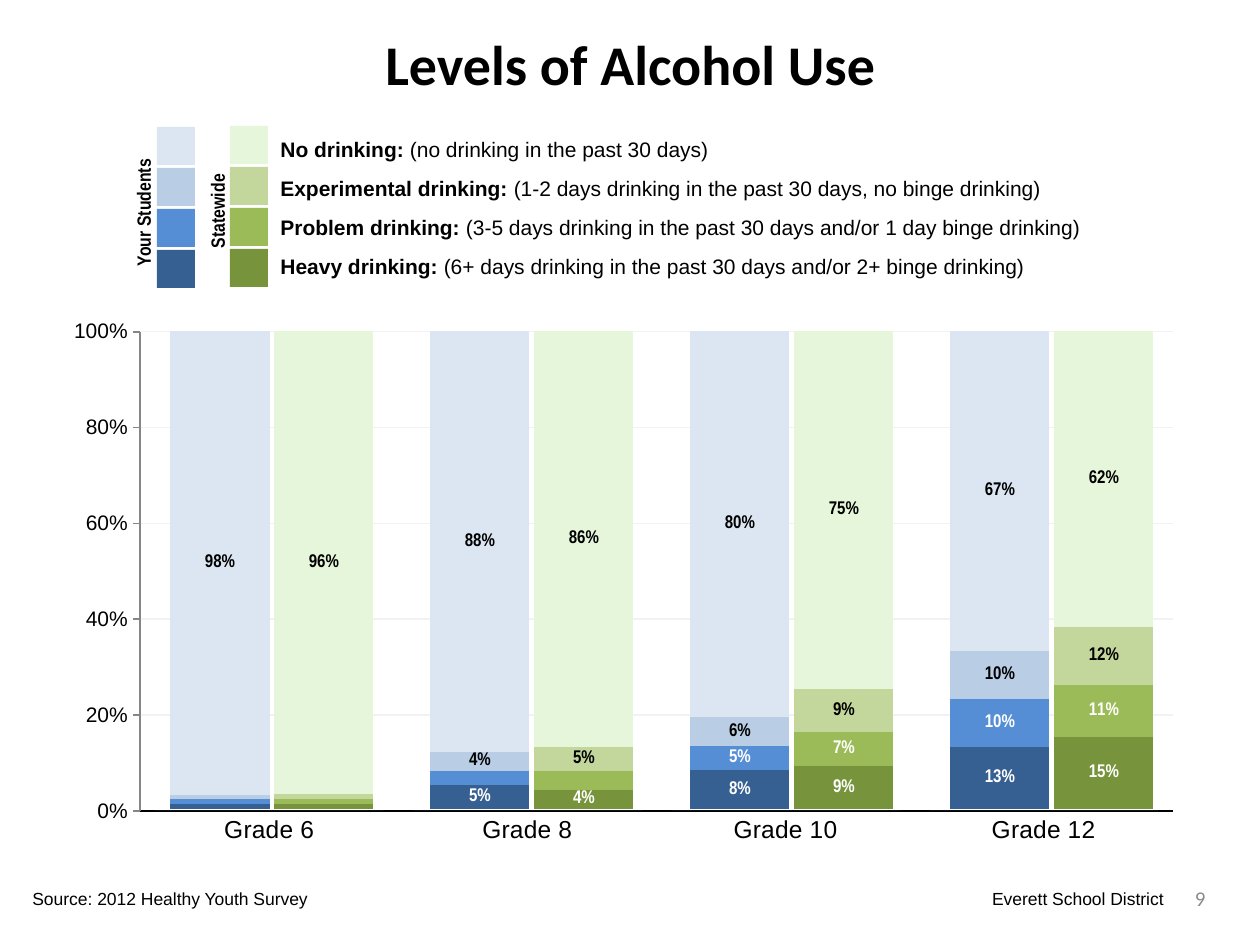
from lxml.etree import SubElement
from pptx import Presentation
from pptx.chart.data import CategoryChartData
from pptx.dml.color import RGBColor
from pptx.enum.chart import XL_CHART_TYPE, XL_LABEL_POSITION, XL_TICK_LABEL_POSITION, XL_TICK_MARK
from pptx.enum.shapes import MSO_SHAPE
from pptx.enum.text import MSO_ANCHOR, PP_ALIGN
from pptx.oxml import parse_xml
from pptx.oxml.ns import nsdecls, qn
from pptx.util import Pt

EMU_PER_PX = 914400 / 126

COLORS = {
    "text": "000000", "light_text": "FFFFFF", "page_number": "8C8C8C",
    "grid": "F2F2F2", "axis": "868686", "base": "4F81BD",
}
# From heavy drinking up to no drinking
STUDENT_COLORS = ["376092", "558ED5", "B9CDE5", "DCE6F2"]
STATE_COLORS = ["77933C", "9BBB59", "C3D69B", "E6F6DA"]

LEGEND = [
    ("No drinking: ", "(no drinking in the past 30 days)", 457),
    ("Experimental drinking: ", "(1-2 days drinking in the past 30 days, no binge drinking)", 793),
    ("Problem drinking: ", "(3-5 days drinking in the past 30 days and/or 1 day binge drinking)", 833),
    ("Heavy drinking: ", "(6+ days drinking in the past 30 days and/or 2+ binge drinking)", 776),
]
# Per grade and level, heavy to none: (statewide, your students)
LEVELS = {
    "Grade 6": [(0.01, 0.01), (0.01, 0.01), (0.01, 0.01), (0.96, 0.98)],
    "Grade 8": [(0.04, 0.05), (0.039, 0.03), (0.05, 0.04), (0.86, 0.88)],
    "Grade 10": [(0.09, 0.08), (0.07, 0.05), (0.09, 0.06), (0.75, 0.80)],
    "Grade 12": [(0.15, 0.13), (0.11, 0.10), (0.12, 0.10), (0.62, 0.67)],
}

TITLE = {"name": "Calibri", "size": Pt(32), "bold": True}
BODY = {"name": "Arial", "size": Pt(12), "bold": False}
BODY_BOLD = {**BODY, "bold": True}
GRADE = {**BODY, "size": Pt(14)}
FOOTER = {**BODY, "size": Pt(10)}
PAGE = {"name": "Calibri", "size": Pt(12), "bold": False}
SIDE = {"name": "Arial Narrow", "size": Pt(11), "bold": True}
LABEL = {"name": "Arial Narrow", "size": Pt(10.5), "bold": True}


def px(*lengths):
    return [round(n * EMU_PER_PX) for n in lengths]


def rgb(value):
    return RGBColor.from_string(COLORS.get(value, value))


def set_font(font, fmt, color="text"):
    for name, value in fmt.items():
        setattr(font, name, value)
    font.color.rgb = rgb(color)


def paint(fill, color):
    fill.solid()
    fill.fore_color.rgb = rgb(color)


class SlideBuilder:
    def __init__(self, slide):
        self.shapes = slide.shapes

    def text(self, box, runs, align=PP_ALIGN.LEFT, anchor=MSO_ANCHOR.TOP,
             wrap=False, rotation=0, color="text"):
        sp = self.shapes.add_textbox(*px(*box))
        sp.rotation = rotation
        tf = sp.text_frame
        tf.word_wrap, tf.vertical_anchor = wrap, anchor
        p = tf.paragraphs[0]
        p.alignment = align
        for words, fmt in runs:
            r = p.add_run()
            r.text = words
            set_font(r.font, fmt, color)

    def swatch(self, x, y, color):
        sp = self.shapes.add_shape(MSO_SHAPE.RECTANGLE, *px(x, y, 38, 38))
        sp.shadow.inherit = False
        paint(sp.fill, color)
        sp.line.fill.background()

    def stacked_chart(self, box, cats, series, gap, plot_box):
        """Add a see-through 100% stacked chart; plot_box is x, y, w, h as shares."""
        data = CategoryChartData(number_format="0%")
        data.categories = cats
        for i, vals in enumerate(series, 1):
            data.add_series(f"Series {i}", vals)
        chart = self.shapes.add_chart(XL_CHART_TYPE.COLUMN_STACKED_100, *px(*box), data).chart
        chart.has_title = chart.has_legend = False
        set_font(chart.font, FOOTER | {"name": "Calibri"})
        plot = chart.plots[0]
        plot.gap_width, plot.overlap, plot.vary_by_categories = gap, 100, False
        axis = chart.value_axis
        axis.minimum_scale, axis.maximum_scale, axis.major_unit = 0, 1, 0.2

        area = chart.element.find(qn("c:chart"))
        area.addnext(parse_xml(
            f'<c:spPr {nsdecls("c", "a")}><a:noFill/><a:ln><a:noFill/></a:ln></c:spPr>'))
        plot_area = area.find(qn("c:plotArea"))
        for old in plot_area.findall(qn("c:layout")):
            plot_area.remove(old)
        layout = parse_xml(f'<c:layout {nsdecls("c")}><c:manualLayout/></c:layout>')
        settings = [("layoutTarget", "inner"), ("xMode", "edge"), ("yMode", "edge")]
        for tag, value in settings + list(zip("xywh", plot_box)):
            SubElement(layout[0], qn(f"c:{tag}")).set("val", str(value))
        plot_area.insert(0, layout)
        return chart

    def grade_axes(self, box):
        """Add the shared axes and grid that the grade columns stand on."""
        chart = self.stacked_chart(box, list(LEVELS), [[0] * len(LEVELS)], 13,
                                   (0.06, 0.031, 0.938, 0.884))
        paint(chart.plots[0].series[0].format.fill, "base")
        cat, val = chart.category_axis, chart.value_axis
        cat.major_tick_mark = XL_TICK_MARK.NONE
        val.major_tick_mark = XL_TICK_MARK.OUTSIDE
        val.has_major_gridlines = True
        val.tick_labels.number_format = "0%"
        val.tick_labels.number_format_is_linked = False
        set_font(cat.tick_labels.font, GRADE)
        set_font(val.tick_labels.font, BODY)
        for part, color, width in ((cat, "text", 1), (val, "axis", 1),
                                   (val.major_gridlines, "grid", 0.75)):
            part.format.line.color.rgb = rgb(color)
            part.format.line.width = Pt(width)

    def grade_columns(self, box, levels):
        chart = self.stacked_chart(box, ["1", "2"], levels, 5, (0, 0.02, 1, 0.937))
        chart.category_axis.reverse_order = True
        chart.value_axis.has_major_gridlines = False
        for axis in (chart.category_axis, chart.value_axis):
            axis.major_tick_mark = XL_TICK_MARK.NONE
            axis.tick_label_position = XL_TICK_LABEL_POSITION.NONE
            axis.format.line.fill.background()
        for i, s in enumerate(chart.plots[0].series):
            paint(s.format.fill, STUDENT_COLORS[i])
            for point, colors in enumerate((STATE_COLORS, STUDENT_COLORS)):
                paint(s.points[point].format.fill, colors[i])
            labels = s.data_labels
            labels.show_value = True
            labels.number_format = '[<0.04]" ";0%'
            labels.number_format_is_linked = False
            labels.position = XL_LABEL_POSITION.CENTER
            set_font(labels.font, LABEL, "light_text" if i < 2 else "text")


def main():
    prs = Presentation()
    prs.slide_width, prs.slide_height = px(1260, 945)
    s = SlideBuilder(prs.slides.add_slide(prs.slide_layouts[6]))

    s.text((32, 21, 1197, 84), [("Levels of Alcohol Use", TITLE)],
           PP_ALIGN.CENTER, MSO_ANCHOR.MIDDLE, wrap=True)

    s.grade_axes((74, 315, 1101, 542))
    for i, levels in enumerate(LEVELS.values()):
        s.grade_columns((168 + 260 * i, 321, 208, 510), levels)

    for x, y, colors in ((157, 127, STUDENT_COLORS), (230, 126, STATE_COLORS)):
        for row, color in enumerate(reversed(colors)):
            s.swatch(x, y + 41 * row, color)
    s.text((77, 193, 134, 37), [("Your Students", SIDE)], rotation=270)
    s.text((168, 192, 100, 37), [("Statewide", SIDE)], rotation=270)
    for row, (level, meaning, width) in enumerate(LEGEND):
        s.text((268, 130 + 39 * row, width, 38), [(level, BODY_BOLD), (meaning, BODY)])

    s.text((20, 882, 305, 34), [("Source: 2012 Healthy Youth Survey", FOOTER)])
    s.text((410, 882, 766, 34), [("Everett School District", FOOTER)], PP_ALIGN.RIGHT)
    s.text((1155, 873, 63, 50), [("9", PAGE)], PP_ALIGN.RIGHT, MSO_ANCHOR.MIDDLE,
           wrap=True, color="page_number")
    prs.save("out.pptx")


if __name__ == "__main__":
    main()
